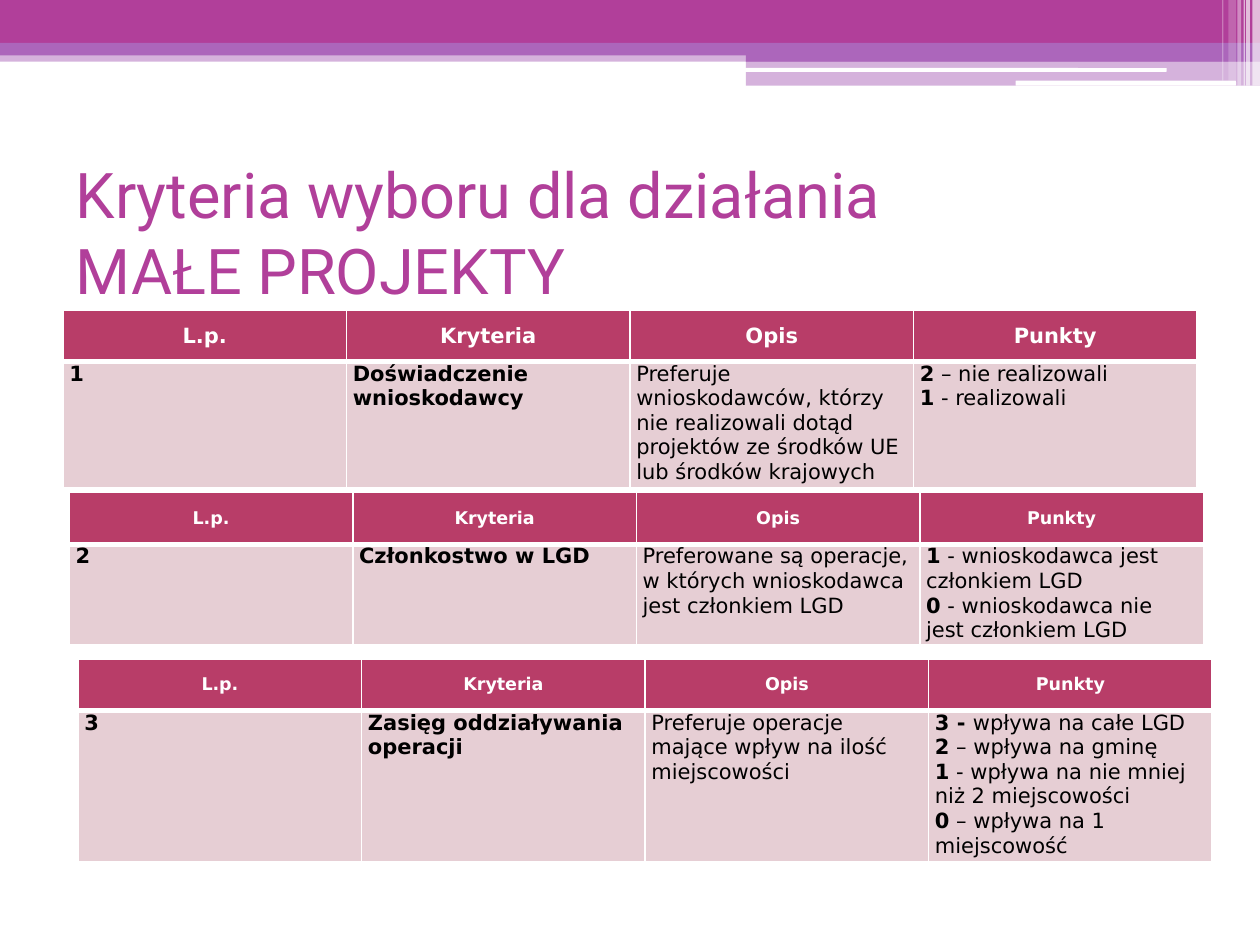
from lxml import etree
from pptx import Presentation, util as u
from pptx.dml.color import RGBColor
from pptx.enum import shapes, text
from pptx.oxml.ns import qn

MAGENTA = RGBColor(0xB1, 0x3F, 0x9A)
VIOLET = RGBColor(0xAC, 0x66, 0xBB)
WHITE = RGBColor(0xFF, 0xFF, 0xFF)
BLACK = RGBColor(0, 0, 0)
HEADER_FILL = RGBColor(0xB8, 0x3D, 0x68)
BODY_FILL = RGBColor(0xE6, 0xCE, 0xD4)

TITLE = "Kryteria wyboru dla działania \vMAŁE PROJEKTY"
HEADINGS = ["L.p.", "Kryteria", "Opis", "Punkty"]

# left, top, body row height, heading size, then number, criterion,
# description and the points as (score, meaning)
CRITERIA = [
    (0.5, 2.46, 1.0, 12, "1", "Doświadczenie wnioskodawcy",
     "Preferuje wnioskodawców, którzy nie realizowali dotąd projektów "
     "ze środków UE lub środków krajowych",
     [("2", " – nie realizowali"), ("1", " - realizowali")]),
    (0.55, 3.91, 0.8, 10, "2", "Członkostwo w LGD",
     "Preferowane są operacje, w których wnioskodawca jest członkiem LGD",
     [("1", " - wnioskodawca jest członkiem LGD"),
      ("0", " - wnioskodawca nie jest członkiem LGD")]),
    (0.62, 5.23, 1.2, 10, "3", "Zasięg oddziaływania operacji",
     "Preferuje operacje mające wpływ na ilość  miejscowości",
     [("3 - ", "wpływa na całe LGD"), ("2", " – wpływa na gminę"),
      ("1", " - wpływa na nie mniej niż 2 miejscowości"),
      ("0", " – wpływa na 1 miejscowość")]),
]

# left, top, width, height, colour, opacity in percent
BANDS = [
    (0, 0.4, 10, 0.09, VIOLET, 50),
    (0, 0, 10, 0.34, MAGENTA, 100),
    (0, 0.34, 10, 0.1, VIOLET, 100),
    (5.92, 0.39, 4.08, 0.1, VIOLET, 100),
    (5.92, 0.48, 4.08, 0.2, VIOLET, 50),
]
ROUNDED_LINES = [
    (5.91, 0.54, 3.35, 0.03, WHITE, 100),
    (8.06, 0.64, 1.75, 0.04, WHITE, 100),
]
# left, width, height, opacity in percent
STRIPES = [
    (9.94, 0.06, 0.68, 65), (9.89, 0.03, 0.68, 65), (9.87, 0.01, 0.68, 60),
    (9.82, 0.03, 0.68, 40), (9.75, 0.06, 0.64, 20), (9.7, 0.01, 0.64, 30),
]
TABLE_WIDTH, HEADER_HEIGHT = 9, 0.41


def add_bar(page, kind, left, top, width, height, color, opacity):
    bar = page.shapes.add_shape(kind, *map(u.Inches, (left, top, width, height)))
    bar.shadow.inherit = False
    bar.line.fill.background()
    bar.fill.solid()
    bar.fill.fore_color.rgb = color
    if opacity < 100:
        tint = bar.fill._xPr.find(".//" + qn("a:srgbClr"))
        etree.SubElement(tint, qn("a:alpha"), val=str(opacity * 1000))


def add_span(para, words, size, color, bold, font="DejaVu Sans"):
    span = para.add_run()
    span.text = words
    style = {"size": u.Pt(size), "name": font, "bold": bold}
    for name, value in style.items():
        setattr(span.font, name, value)
    span.font.color.rgb = color


def format_cell(cell, fill, anchor, bottom_width):
    layout = {"margin_left": u.Inches(0.05), "margin_right": u.Inches(0.05),
              "margin_top": 0, "margin_bottom": 0, "vertical_anchor": anchor}
    for name, value in layout.items():
        setattr(cell, name, value)
    properties = cell._tc.get_or_add_tcPr()
    for side, width in (("L", 1), ("R", 1), ("T", 1), ("B", bottom_width)):
        line = etree.SubElement(properties, qn("a:ln" + side), w=str(u.Pt(width)))
        solid = etree.SubElement(line, qn("a:solidFill"))
        etree.SubElement(solid, qn("a:srgbClr"), val=str(WHITE))
    cell.fill.solid()
    cell.fill.fore_color.rgb = fill


def add_criterion(page, left, top, body_height, heading_size,
                  number, criterion, description, points):
    frame = page.shapes.add_table(
        2, len(HEADINGS), u.Inches(left), u.Inches(top),
        u.Inches(TABLE_WIDTH), u.Inches(HEADER_HEIGHT + body_height))
    table = frame.table
    table.rows[0].height = u.Inches(HEADER_HEIGHT)
    table.rows[1].height = u.Inches(body_height)

    for column, heading in enumerate(HEADINGS):
        table.columns[column].width = u.Inches(TABLE_WIDTH / len(HEADINGS))
        cell = table.cell(0, column)
        format_cell(cell, HEADER_FILL, text.MSO_ANCHOR.MIDDLE, 3)
        para = cell.text_frame.paragraphs[0]
        para.alignment = text.PP_ALIGN.CENTER
        add_span(para, heading, heading_size, WHITE, True)

    # each cell is a list of paragraphs, each a (bold, regular) pair
    body = [[(number, "")], [(criterion, "")], [("", description)], points]
    for column, lines in enumerate(body):
        cell = table.cell(1, column)
        format_cell(cell, BODY_FILL, text.MSO_ANCHOR.TOP, 1)
        for index, pair in enumerate(lines):
            frame = cell.text_frame
            para = frame.add_paragraph() if index else frame.paragraphs[0]
            for words, bold in zip(pair, (True, False)):
                if words:
                    add_span(para, words, 12, BLACK, bold)


def add_title(page):
    title = page.shapes.title
    box = {"left": 0.5, "top": 1.25, "width": 9, "height": 1.17}
    for name, value in box.items():
        setattr(title, name, u.Inches(value))
    title.text_frame.text = TITLE
    title.text_frame.vertical_anchor = text.MSO_ANCHOR.MIDDLE
    para = title.text_frame.paragraphs[0]
    para.alignment = text.PP_ALIGN.LEFT
    for name, value in {"size": u.Pt(36), "name": "Roboto"}.items():
        setattr(para.font, name, value)
        for span in para.runs:
            setattr(span.font, name, value)
    for span in para.runs:
        span.font.color.rgb = MAGENTA


def main():
    deck = Presentation()
    deck.slide_width, deck.slide_height = u.Inches(10), u.Inches(7.5)
    page = deck.slides.add_slide(deck.slide_layouts[5])
    for band in BANDS:
        add_bar(page, shapes.MSO_SHAPE.RECTANGLE, *band)
    for line in ROUNDED_LINES:
        add_bar(page, shapes.MSO_SHAPE.ROUNDED_RECTANGLE, *line)
    for left, width, height, opacity in STRIPES:
        add_bar(page, shapes.MSO_SHAPE.RECTANGLE,
                left, 0, width, height, WHITE, opacity)
    add_title(page)
    for criterion in CRITERIA:
        add_criterion(page, *criterion)
    deck.save("out.pptx")


if __name__ == "__main__":
    main()
